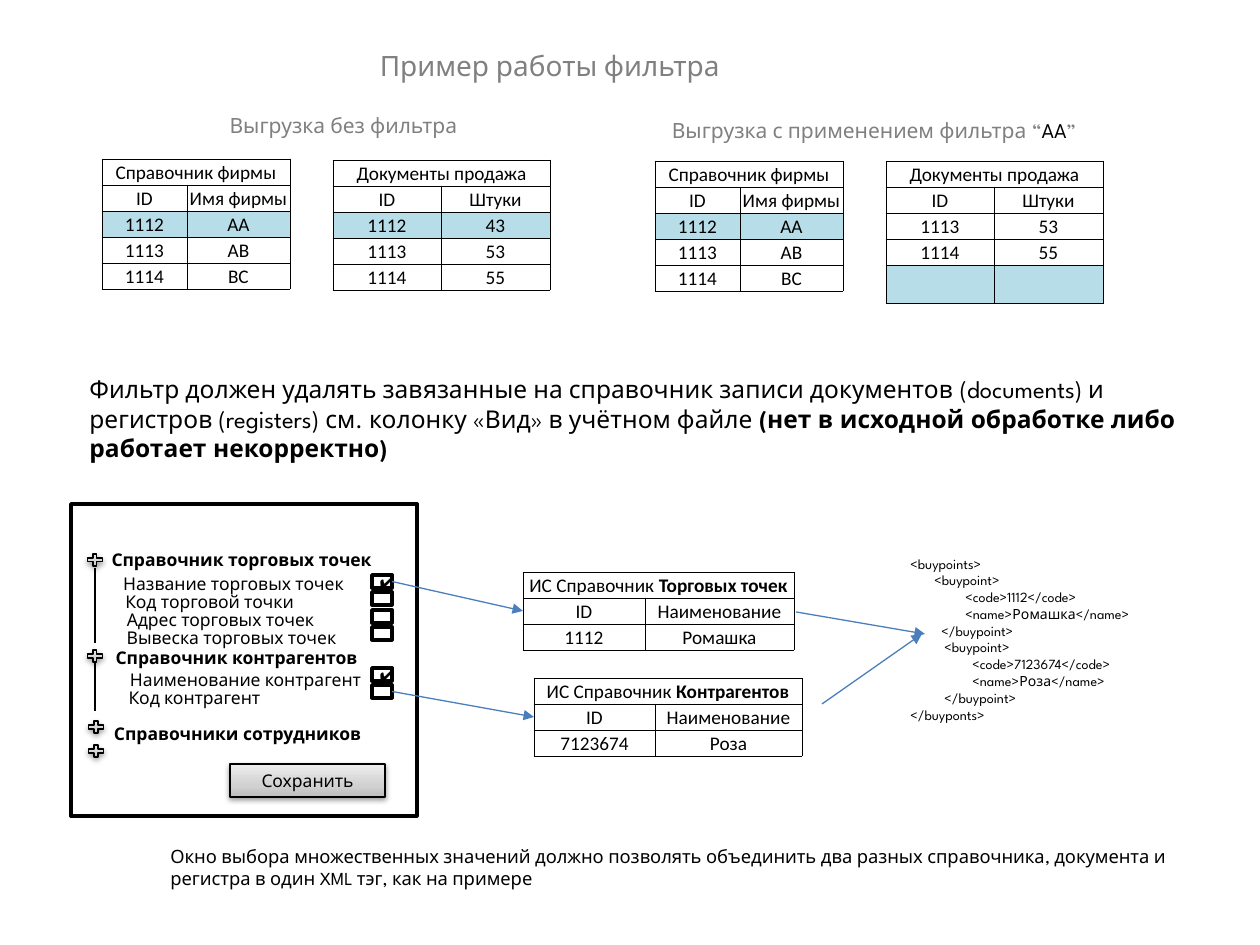
import pptx
import pptx.dml.color
import pptx.enum.shapes
import pptx.enum.text
import pptx.oxml
import pptx.oxml.ns
import pptx.util

PX = 7257  # EMU in one px, 126 px to the inch
SPARTAN, CALIBRI = "League Spartan", "Calibri"
NAMESPACE = pptx.oxml.ns.nsdecls("a")
SHAPES = pptx.enum.shapes.MSO_SHAPE
ALIGN = pptx.enum.text.PP_ALIGN
MIDDLE = pptx.enum.text.MSO_ANCHOR.MIDDLE
hex_color = pptx.dml.color.RGBColor.from_string


def write(frame, texts, size, align=ALIGN.CENTER, color="000000", bold=False, face=SPARTAN):
    """Fill the first paragraph with one run for each text."""
    para = frame.paragraphs[0]
    para.alignment = align
    para.font.name, para.font.size, para.font.bold = face, pptx.util.Pt(size), bold
    para.font.color.rgb = hex_color(color)
    for text in texts:
        para.add_run().text = text
    return para


def add_box(left, top, width, height, wrap=True):
    box = page.shapes.add_textbox(left * PX, top * PX, width * PX, height * PX)
    box.text_frame.word_wrap = wrap
    return box.text_frame


deck = pptx.Presentation()
deck.slide_width, deck.slide_height = 1260 * PX, 945 * PX
page = deck.slides.add_slide(deck.slide_layouts[5])

# Headings
title = page.shapes.title
title.left, title.top, title.width, title.height = 354 * PX, 42 * PX, 392 * PX, 47 * PX
title.text_frame.word_wrap = False
title.text_frame.vertical_anchor = pptx.enum.text.MSO_ANCHOR.TOP
write(title.text_frame, ["Пример работы фильтра"], 16, color="808080")
write(add_box(212, 106, 263, 38, False), ["Выгрузка без фильтра"], 12, color="808080")
filtered = write(add_box(646, 111, 456, 38, False),
                 ["Выгрузка с применением фильтра “", "AA", "”"], 12, color="808080")
filtered.runs[1].font.color.rgb = hex_color("000000")

# Tables: left, top, column widths, heading parts, rows, shaded row
firms = [("ID", "Имя фирмы"), ("1112", "AA"), ("1113", "AB"), ("1114", "BC")]
sales = [("ID", "Штуки"), ("1112", "43"), ("1113", "53"), ("1114", "55")]
kept_sales = [sales[0], *sales[2:], ("", "")]
tables = [
    (102, 159, (85, 103), ["Справочник фирмы"], firms, 2),
    (333, 160, (108, 109), ["Документы продажа"], sales, 2),
    (655, 161, (85, 103), ["Справочник фирмы"], firms, 2),
    (886, 161, (108, 109), ["Документы продажа"], kept_sales, 4),
    (523, 572, (122, 149), ["ИС Справочник ", "Торговых точек"],
     [("ID", "Наименование"), ("1112", "Ромашка")], None),
    (534, 678, (121, 147), ["ИС Справочник ", "Контрагентов"],
     [("ID", "Наименование"), ("7123674", "Роза")], None),
]
for left, top, widths, heading, rows, shaded in tables:
    height = 26 * (len(rows) + 1)
    table = page.shapes.add_table(len(rows) + 1, 2, left * PX, top * PX,
                                  sum(widths) * PX, height * PX).table
    table.first_row = table.horz_banding = False
    for column, width in zip(table.columns, widths):
        column.width = width * PX
    for row_index, row in enumerate([(heading, [])] + [([a], [b]) for a, b in rows]):
        table.rows[row_index].height = 26 * PX
        for column_index, texts in enumerate(row):
            cell = table.cell(row_index, column_index)
            cell.margin_left = cell.margin_right = cell.margin_top = PX
            cell.margin_bottom = 0
            cell.vertical_anchor = MIDDLE
            for side in ("lnL", "lnR", "lnT", "lnB"):
                cell._tc.get_or_add_tcPr().append(pptx.oxml.parse_xml(
                    f'<a:{side} {NAMESPACE} w="6350"><a:solidFill><a:srgbClr val="000000"/>'
                    f'</a:solidFill></a:{side}>'))
            if row_index == shaded:
                cell.fill.solid()
                cell.fill.fore_color.rgb = hex_color("B7DEE8")
            else:
                cell.fill.background()
            para = write(cell.text_frame, texts, 11, face=CALIBRI)
            for span in para.runs[1:]:
                span.font.bold = True
    table.cell(0, 0).merge(table.cell(0, 1))

# Requirement
requirement = write(add_box(77, 368, 1131, 102), [
    "Фильтр должен удалять завязанные на справочник записи документов (documents) и "
    "регистров (registers) см. колонку «Вид» в учётном файле ",
    "(нет в исходной обработке либо работает некорректно)"], 14, ALIGN.LEFT)
requirement.runs[1].font.bold = True

# Selection window: frame and check boxes
checkboxes = {}
outlined = [(71, 504, 346, 312, "")]
outlined += [(372, top, 20, 13, mark) for top, mark in
             [(575, "✔"), (592, ""), (610, ""), (627, ""), (668, "✔"), (685, "")]]
for left, top, width, height, mark in outlined:
    shape = page.shapes.add_shape(SHAPES.RECTANGLE, left * PX, top * PX, width * PX, height * PX)
    shape.shadow.inherit = False
    shape.fill.solid()
    shape.fill.fore_color.rgb = hex_color("FFFFFF")
    shape.line.color.rgb = hex_color("000000")
    shape.line.width = pptx.util.Pt(2)
    checkboxes[top] = shape
    if mark:
        write(shape.text_frame, [mark], 10)

# Selection window: plus signs and button
raised = [(SHAPES.MATH_PLUS, left, top, 20, 16, "")
          for left, top in [(85, 552), (86, 719), (86, 743), (85, 648)]]
raised.append((SHAPES.RECTANGLE, 230, 764, 155, 33, "Сохранить"))
for kind, left, top, width, height, caption in raised:
    shape = page.shapes.add_shape(kind, left * PX, top * PX, width * PX, height * PX)
    shape.line.color.rgb = hex_color("000000")
    shape.line.width = pptx.util.Pt(0.75)
    stops = "".join(f'<a:gs pos="{place}"><a:srgbClr val="{color}"/></a:gs>' for place, color in
                    [(0, "BDBDBD"), (35000, "D1D1D1"), (100000, "EEEEEE")])
    properties = shape._element.spPr
    properties.insert(2, pptx.oxml.parse_xml(
        f'<a:gradFill {NAMESPACE} rotWithShape="1"><a:gsLst>{stops}</a:gsLst>'
        '<a:lin ang="16200000" scaled="1"/></a:gradFill>'))
    properties.append(pptx.oxml.parse_xml(
        f'<a:effectLst {NAMESPACE}><a:outerShdw blurRad="40000" dist="20000" dir="5400000" '
        'rotWithShape="0"><a:srgbClr val="000000"><a:alpha val="38000"/></a:srgbClr>'
        '</a:outerShdw></a:effectLst>'))
    if caption:
        shape.text_frame.vertical_anchor = MIDDLE
        write(shape.text_frame, [caption], 10)

# Selection window: labels
labels = [
    (-11, 543, "Справочник торговых точек", True),
    (-19, 567, "Название торговых точек", False),
    (-43, 585, "Код торговой точки", False),
    (-32, 603, "Адрес торговых точек", False),
    (-21, 621, "Вывеска торговых точек", False),
    (-16, 641, "Справочник контрагентов", True),
    (-7, 663, "Наименование контрагент", False),
    (-58, 681, "Код контрагент", False),
    (-15, 717, "Справочники сотрудников", True),
]
for left, top, label, bold in labels:
    write(add_box(left, top, 505, 29), [label], 10, bold=bold)

# Resulting XML: indent in px, line
xml_lines = [
    (0, "<buypoints>"), (24, "<buypoint>"), (55, "<code>1112</code>"),
    (55, "<name>Ромашка</name>"), (31, "</buypoint>"), (34, "<buypoint>"),
    (62, "<code>7123674</code>"), (62, "<name>Роза</name>"), (34, "</buypoint>"),
    (0, "</buyponts>"),
]
xml_frame = add_box(898, 549, 357, 217)
for index, (indent, line) in enumerate(xml_lines):
    para = xml_frame.add_paragraph() if index else xml_frame.paragraphs[0]
    para.text = line
    para.font.name, para.font.size = SPARTAN, pptx.util.Pt(8)
    para.font.color.rgb = hex_color("000000")
    para._p.get_or_add_pPr().set("marL", str(indent * PX))

# Tree lines and arrows: start, end, color, check box at the start
connectors = [
    (95, 568, 95, 643, "000000", None),
    (95, 663, 95, 711, "000000", None),
    (822, 704, 922, 634, "4B7EBC", None),
    (796, 612, 925, 634, "4B7EBC", None),
    (392, 581, 523, 611, "4B7EBC", checkboxes[575]),
    (392, 692, 534, 717, "4B7EBC", checkboxes[685]),
]
for start_x, start_y, end_x, end_y, color, checkbox in connectors:
    connector = page.shapes.add_connector(pptx.enum.shapes.MSO_CONNECTOR.STRAIGHT,
                                          start_x * PX, start_y * PX, end_x * PX, end_y * PX)
    connector.line.color.rgb = hex_color(color)
    connector.line.width = pptx.util.Pt(0.75)
    if checkbox:
        connector.begin_connect(checkbox, 3)
    if color != "000000":
        connector.line._get_or_add_ln().append(
            pptx.oxml.parse_xml(f'<a:tailEnd {NAMESPACE} type="triangle"/>'))
    connector._element.spPr.append(pptx.oxml.parse_xml(f'<a:effectLst {NAMESPACE}/>'))

# Footnote
write(add_box(158, 839, 1071, 57), [
    "Окно выбора множественных значений должно позволять объединить два разных справочника, "
    "документа и регистра в один XML тэг, как на примере"], 10.5, ALIGN.LEFT)

deck.save("out.pptx")
